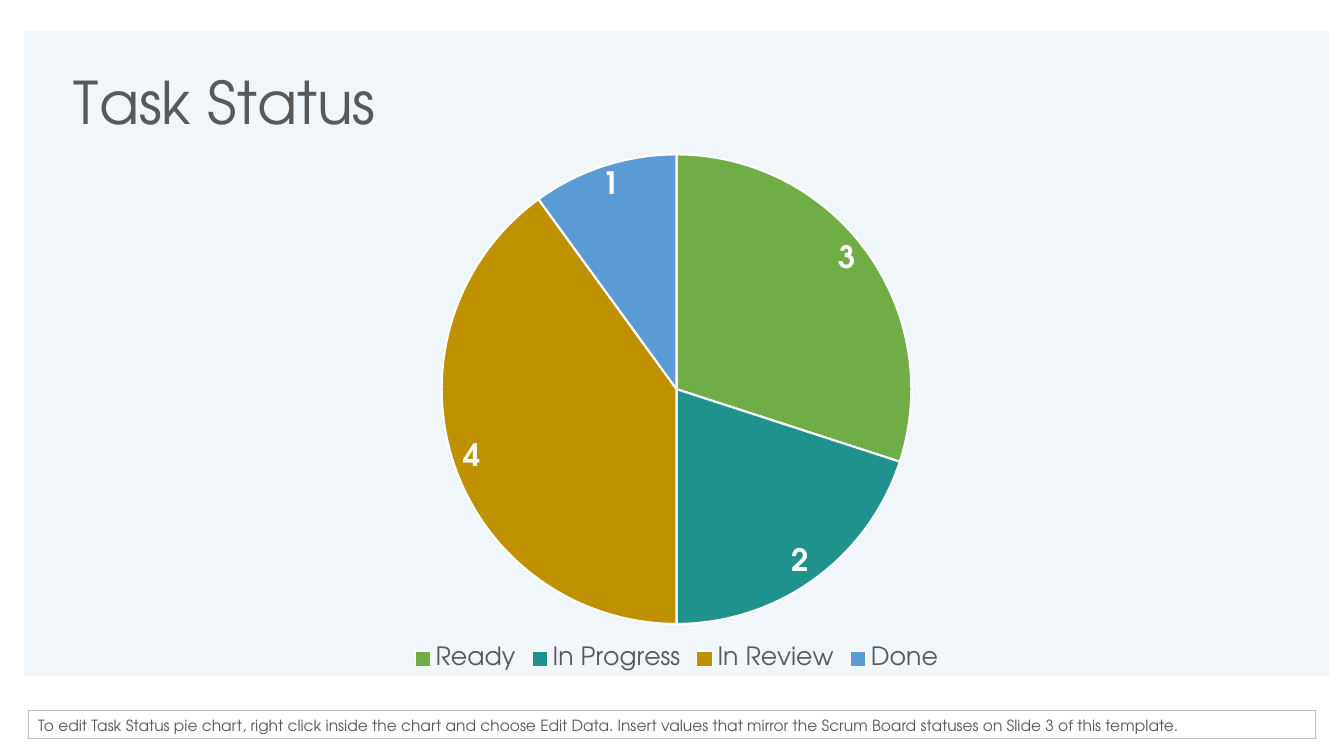
from pptx import Presentation
from pptx import util as u
from pptx.chart.data import CategoryChartData
from pptx.dml.color import RGBColor
from pptx.enum import chart as ch, shapes, text
from pptx.oxml import parse_xml
from pptx.oxml.ns import nsdecls, qn

FACE = "TeX Gyre Adventor"
COLORS = {
    "panel": "F1F6FB", "white": "FFFFFF", "text": "595959", "border": "BFBFBF",
    "Ready": "70AD47", "In Progress": "20928D", "In Review": "BF9000", "Done": "5B9BD5",
}
TASKS = {"Ready": 3, "In Progress": 2, "In Review": 4, "Done": 1}


def write(frame, wording, size, color="text", space_after=0, line_spacing=None):
    paragraph = frame.paragraphs[0]
    paragraph.space_after = u.Pt(space_after)
    if line_spacing:
        paragraph.line_spacing = line_spacing
    run = paragraph.add_run()
    run.text = wording
    style(run.font, size, color)


def style(font, size, color="text", bold=False):
    font.name, font.size, font.bold = FACE, u.Pt(size), bold
    font.color.rgb = RGBColor.from_string(COLORS[color])


prs = Presentation()
prs.slide_width, prs.slide_height = u.Inches(13.33), u.Inches(7.5)
slide = prs.slides.add_slide(prs.slide_layouts[6])

# Task status pie
status_data = CategoryChartData()
status_data.categories = list(TASKS)
status_data.add_series("Series 1", list(TASKS.values()))
status = slide.shapes.add_chart(
    ch.XL_CHART_TYPE.PIE, u.Inches(0.24), u.Inches(0.31),
    u.Inches(12.94), u.Inches(6.4), status_data).chart
style(status.font, 10)

status.has_title = True
write(status.chart_title.text_frame, "Task Status", 42)

status.has_legend = True
status.legend.position = ch.XL_LEGEND_POSITION.BOTTOM
status.legend.include_in_layout = False
style(status.legend.font, 18)

pie = status.plots[0]
pie.vary_by_categories = True
for index, task in enumerate(TASKS):
    slice_format = pie.series[0].points[index].format
    slice_format.fill.solid()
    slice_format.fill.fore_color.rgb = RGBColor.from_string(COLORS[task])
    slice_format.line.color.rgb = RGBColor.from_string(COLORS["white"])
    slice_format.line.width = u.Pt(1.5)

pie.has_data_labels = True
counts = pie.data_labels
counts.show_value = True
counts.show_percentage = False
counts.position = ch.XL_LABEL_POSITION.BEST_FIT
style(counts.font, 22, "white", bold=True)

# Panel fill and fixed places for the title and the pie
chart_space = status.element
chart_space.find(qn("c:txPr")).addprevious(parse_xml(
    f'<c:spPr {nsdecls("c", "a")}><a:solidFill><a:srgbClr val="{COLORS["panel"]}"/>'
    '</a:solidFill><a:ln><a:noFill/></a:ln></c:spPr>'))
title = chart_space.chart.find(qn("c:title"))
plot_area = chart_space.chart.plotArea
for part, position, place in (
    (title, 1, {"x": 0.03, "y": 0.05}),
    (plot_area, 0, {"x": 0.32, "y": 0.19, "w": 0.36, "h": 0.73}),
):
    for automatic in part.findall(qn("c:layout")):
        part.remove(automatic)
    target = '<c:layoutTarget val="inner"/>' if part is plot_area else ""
    modes = "".join(f'<c:{axis}Mode val="edge"/>' for axis in "xy")
    values = "".join(f'<c:{key} val="{value}"/>' for key, value in place.items())
    part.insert(position, parse_xml(
        f'<c:layout {nsdecls("c")}><c:manualLayout>{target}{modes}{values}'
        '</c:manualLayout></c:layout>'))

# Editing hint
hint = slide.shapes.add_shape(
    shapes.MSO_SHAPE.RECTANGLE, u.Inches(0.28), u.Inches(7.05),
    u.Inches(12.77), u.Inches(0.28))
hint.shadow.inherit = False
hint.fill.solid()
hint.fill.fore_color.rgb = RGBColor.from_string(COLORS["white"])
hint.line.color.rgb = RGBColor.from_string(COLORS["border"])
hint.line.width = u.Pt(0.5)
hint.text_frame.word_wrap = True
hint.text_frame.vertical_anchor = text.MSO_ANCHOR.MIDDLE
hint.text_frame.paragraphs[0].alignment = text.PP_ALIGN.LEFT
write(hint.text_frame,
      "To edit Task Status pie chart, right click inside the chart and choose Edit Data. "
      "Insert values that mirror the Scrum Board statuses on Slide 3 of this template.",
      11, space_after=8, line_spacing=1.07)

prs.save("out.pptx")
